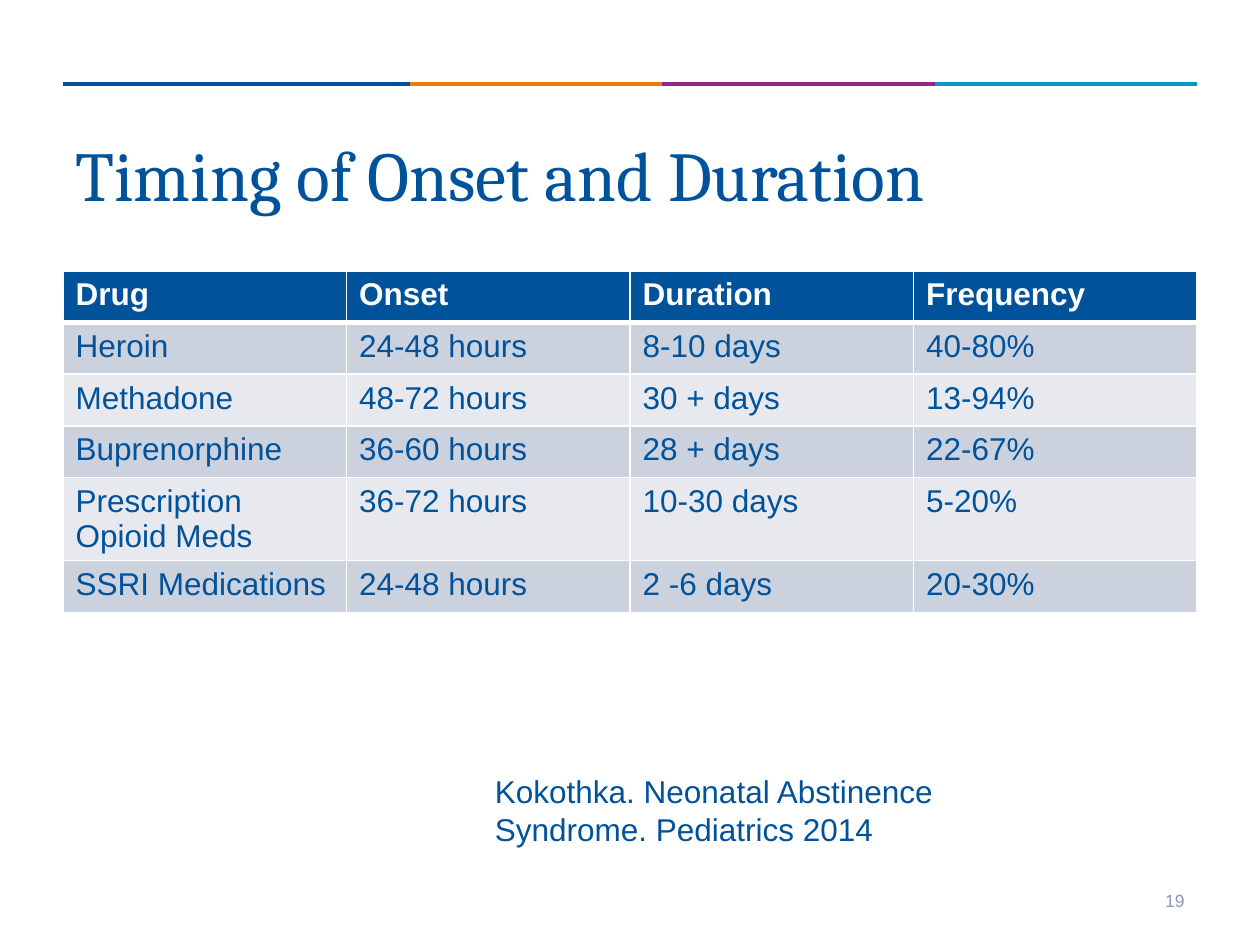
"""Build the slide on timing of onset and duration."""
from lxml.etree import SubElement
from pptx import Presentation
from pptx.dml.color import RGBColor
from pptx.enum.shapes import MSO_CONNECTOR
from pptx.enum.text import MSO_ANCHOR, PP_ALIGN
from pptx.oxml.ns import qn
from pptx.util import Inches, Pt

BLUE = RGBColor(0x00, 0x52, 0x9B)
ORANGE = RGBColor(0xEC, 0x7A, 0x08)
PURPLE = RGBColor(0x92, 0x27, 0x84)
TEAL = RGBColor(0x00, 0x9A, 0xC7)
WHITE = RGBColor(0xFF, 0xFF, 0xFF)
GREY = RGBColor(0x8C, 0x98, 0xBB)
DARK = RGBColor(0xCC, 0xD1, 0xDE)
LIGHT = RGBColor(0xE7, 0xE9, 0xEF)

TITLE = "Timing of Onset and Duration"
CITE = "Kokothka. Neonatal Abstinence Syndrome. Pediatrics 2014"
NUMBER = "19"
ROWS = [
    ("Drug", "Onset", "Duration", "Frequency"),
    ("Heroin", "24-48 hours", "8-10 days", "40-80%"),
    ("Methadone", "48-72 hours", "30 + days", "13-94%"),
    ("Buprenorphine", "36-60 hours", "28 + days", "22-67%"),
    ("Prescription Opioid Meds", "36-72 hours", "10-30 days", "5-20%"),
    ("SSRI Medications", "24-48 hours", "2 -6 days", "20-30%"),
]
STOPS = [0.5, 3.25, 5.25, 7.42, 9.5]
HUES = [BLUE, ORANGE, PURPLE, TEAL]
RULE_Y = 0.67
ROW_H = 0.41


def write(frame, text, size=18, color=BLUE, font="Arial", bold=False,
          align=PP_ALIGN.LEFT, anchor=MSO_ANCHOR.TOP):
    frame.word_wrap = True
    frame.vertical_anchor = anchor
    para = frame.paragraphs[0]
    para.alignment = align
    run = para.add_run()
    run.text = text
    run.font.size = Pt(size)
    run.font.name = font
    run.font.bold = bold
    run.font.color.rgb = color


def add_box(slide, text, spot, **style):
    box = slide.shapes.add_textbox(*map(Inches, spot))
    write(box.text_frame, text, **style)


def add_rule(slide, start, end, color):
    rule = slide.shapes.add_connector(
        MSO_CONNECTOR.STRAIGHT, Inches(start), Inches(RULE_Y),
        Inches(end), Inches(RULE_Y))
    rule.line.color.rgb = color
    rule.line.width = Pt(2.25)
    SubElement(rule._element.spPr, qn("a:effectLst"))


def add_edges(cell, widths):
    props = cell._tc.get_or_add_tcPr()
    for spot, (side, width) in enumerate(widths.items()):
        edge = props.makeelement(qn(f"a:ln{side}"), {"w": str(Pt(width))})
        fill = SubElement(edge, qn("a:solidFill"))
        SubElement(fill, qn("a:srgbClr"), val=str(WHITE))
        props.insert(spot, edge)


def add_grid(slide):
    grid = slide.shapes.add_table(
        len(ROWS), len(ROWS[0]), Inches(0.5), Inches(2.15),
        Inches(9), Inches(ROW_H * len(ROWS))).table
    for i, row in enumerate(ROWS):
        head = i == 0
        shade = BLUE if head else (LIGHT, DARK)[i % 2]
        for j, text in enumerate(row):
            cell = grid.cell(i, j)
            write(cell.text_frame, text, bold=head,
                  color=WHITE if head else BLUE)
            cell.fill.solid()
            cell.fill.fore_color.rgb = shade
            add_edges(cell, {"L": 1, "R": 1, "T": 3 if i == 1 else 1,
                             "B": 3 if head else 1})


def main():
    deck = Presentation()
    deck.slide_width, deck.slide_height = Inches(10), Inches(7.5)
    slide = deck.slides.add_slide(deck.slide_layouts[5])
    for start, end, hue in zip(STOPS, STOPS[1:], HUES):
        add_rule(slide, start, end, hue)
    title = slide.shapes.title
    title.left, title.top = Inches(0.5), Inches(0.75)
    title.width, title.height = Inches(9), Inches(1.25)
    write(title.text_frame, TITLE, size=40, font="Cambria",
          anchor=MSO_ANCHOR.MIDDLE)
    add_grid(slide)
    add_box(slide, NUMBER, (8.5, 6.95, 1, 0.4), size=10, color=GREY,
            align=PP_ALIGN.RIGHT, anchor=MSO_ANCHOR.MIDDLE)
    add_box(slide, CITE, (3.83, 6.08, 4.25, 0.71))
    deck.save("out.pptx")


if __name__ == "__main__":
    main()
